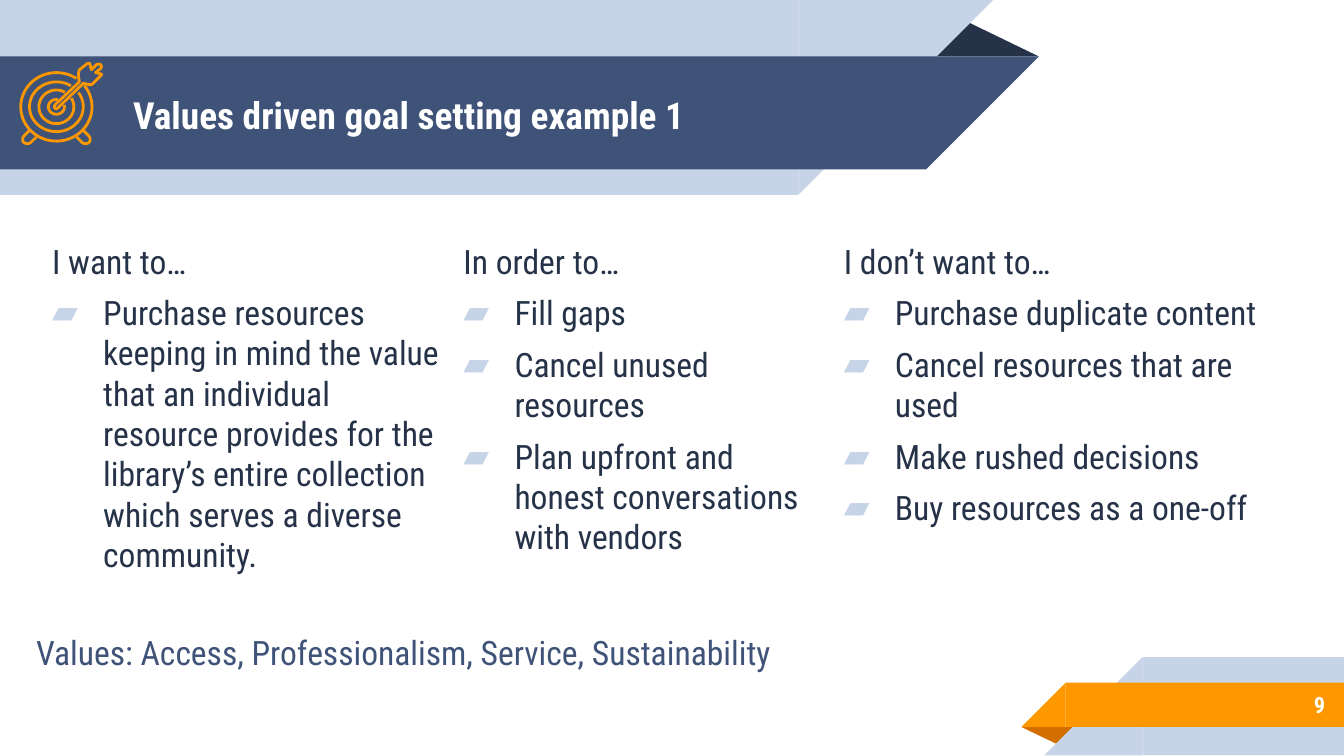
import math
from dataclasses import dataclass

from lxml import etree
from pptx import Presentation, util as u
from pptx.dml.color import RGBColor
from pptx.enum import shapes, text
from pptx.oxml import ns

PX = u.Inches(1) // 100
FINE = 100  # freeform units per px


@dataclass(frozen=True)
class Theme:
    font: str = "Roboto Condensed"
    ink: str = "263248"
    navy: str = "3F5378"
    pale: str = "C7D3E6"
    orange: str = "FF9800"
    rust: str = "D26F00"
    white: str = "FFFFFF"
    title: int = 20
    body: int = 18
    number: int = 12
    icon_line: float = 1.5


def px(*lengths):
    return [length * PX for length in lengths]


def add_bullet(paragraph, theme):
    properties = paragraph._p.get_or_add_pPr()
    bullet_color = etree.SubElement(properties, ns.qn("a:buClr"))
    etree.SubElement(bullet_color, ns.qn("a:srgbClr"), val=theme.pale)
    etree.SubElement(properties, ns.qn("a:buFont"), typeface=theme.font)
    etree.SubElement(properties, ns.qn("a:buChar"), char="▰")


def set_indent(paragraph, left, first):
    properties = paragraph._p.get_or_add_pPr()
    properties.set("marL", str(left * PX))
    properties.set("indent", str(first * PX))


def write(paragraph, words, *, theme, size, color, bold=False,
          align=text.PP_ALIGN.LEFT, before=0):
    paragraph.alignment = align
    paragraph.space_before = u.Pt(before)
    run = paragraph.add_run()
    run.text = words
    font = run.font
    font.name, font.size, font.bold = theme.font, u.Pt(size), bold
    font.color.rgb = RGBColor.from_string(color)


def ring(radius_x, radius_y, start, end):
    """Points of an open arc round the target's centre, in degrees."""
    angles = [math.radians(start + (end - start) * i / 60) for i in range(61)]
    return [(42 + radius_x * math.cos(a), 79.5 + radius_y * math.sin(a))
            for a in angles]


class Page:
    def __init__(self, slide, theme):
        self.slide, self.theme = slide, theme

    def shape(self, kind, box, color, rotation=0, apex=None):
        part = self.slide.shapes.add_shape(kind, *px(*box))
        part.shadow.inherit = False
        part.fill.solid()
        part.fill.fore_color.rgb = RGBColor.from_string(color)
        part.line.fill.background()
        part.rotation = rotation
        if apex is not None:
            part.adjustments[0] = apex

    def left_band(self, top, width, height, color):
        """Band from the left edge, with a slanted right end."""
        self.shape(shapes.MSO_SHAPE.RECTANGLE, (0, top, width, height), color)
        self.shape(shapes.MSO_SHAPE.RIGHT_TRIANGLE,
                   (width, top, height, height), color, rotation=90)

    def right_band(self, left, top, height, color):
        """Band to the right edge, with a slanted left end."""
        self.shape(shapes.MSO_SHAPE.RECTANGLE,
                   (left, top, 1000 - left, height), color)
        self.shape(shapes.MSO_SHAPE.RIGHT_TRIANGLE,
                   (left - height, top, height, height), color, rotation=270)

    def fold(self, box, color, rotation=0):
        self.shape(shapes.MSO_SHAPE.ISOSCELES_TRIANGLE, box, color,
                   rotation, apex=0.32)

    def frame(self, holder, anchor=text.MSO_ANCHOR.TOP, inset=10):
        frame = holder.text_frame
        frame.word_wrap = True
        frame.auto_size = text.MSO_AUTO_SIZE.NONE
        frame.vertical_anchor = anchor
        frame.margin_left = frame.margin_right = 10 * PX
        frame.margin_top = frame.margin_bottom = inset * PX
        return frame

    def title(self, words, box):
        holder = self.slide.shapes.title
        holder.left, holder.top, holder.width, holder.height = px(*box)
        self.slide.shapes._spTree.append(holder._element)  # above the bands
        frame = self.frame(holder, text.MSO_ANCHOR.MIDDLE)
        write(frame.paragraphs[0], words, theme=self.theme,
              size=self.theme.title, color=self.theme.white, bold=True)

    def label(self, words, box, *, anchor=text.MSO_ANCHOR.TOP, inset=10,
              **style):
        holder = self.slide.shapes.add_textbox(*px(*box))
        frame = self.frame(holder, anchor, inset)
        write(frame.paragraphs[0], words, theme=self.theme, **style)

    def column(self, left, width, heading, points):
        holder = self.slide.shapes.add_textbox(*px(left, 169, width, 296))
        frame = self.frame(holder)
        style = dict(theme=self.theme, size=self.theme.body,
                     color=self.theme.ink, before=6)
        write(frame.paragraphs[0], heading, **style)
        set_indent(frame.paragraphs[0], 12, 0)
        for point in points:
            paragraph = frame.add_paragraph()
            write(paragraph, point, **style)
            set_indent(paragraph, 50, -38)
            add_bullet(paragraph, self.theme)

    def outline(self, points, close=False):
        start, *rest = [(round(x * FINE), round(y * FINE)) for x, y in points]
        builder = self.slide.shapes.build_freeform(*start, scale=PX / FINE)
        builder.add_line_segments(rest, close=close)
        stroke = builder.convert_to_shape()
        stroke.shadow.inherit = False
        stroke.fill.background()
        stroke.line.color.rgb = RGBColor.from_string(self.theme.orange)
        stroke.line.width = u.Pt(self.theme.icon_line)


RINGS = [(26.5, 25.5, -56, -398), (20, 18.5, -35, 303),
         (6, 5.5, -15, 280), (13, 12.5, -61, -391)]
LEFT_FOOT = [(22, 97), (18, 101), (17, 102.5), (17, 105), (18, 106.3),
             (20, 107), (21.5, 106.8), (23, 106), (27, 102)]
ARROW = [(75, 55), (71, 54), (75, 51), (75.5, 49.5), (75, 48.2), (73.5, 47.7),
         (72, 48), (68, 52), (67, 48), (66.5, 47), (65, 47.3), (59, 52),
         (58.5, 54), (58.3, 56), (59, 61), (41, 78), (40.3, 79.5),
         (41, 80.7), (42, 81), (43, 80.4), (62, 62), (66, 63), (68, 63),
         (69, 62.3), (75, 56.3), (75.6, 55.5)]
COLUMNS = [
    (17, 324, "I want to…", [
        "Purchase resources keeping in mind the value that an individual "
        "resource provides for the library’s entire collection which serves "
        "a diverse community."]),
    (323, 292, "In order to…", [
        "Fill gaps", "Cancel unused resources",
        "Plan upfront and honest conversations with vendors"]),
    (606, 351, "I don’t want to…", [
        "Purchase duplicate content", "Cancel resources that are used",
        "Make rushed decisions", "Buy resources as a one-off"]),
]


def main():
    theme = Theme()
    deck = Presentation()
    deck.slide_width = 1000 * PX
    deck.slide_height = deck.slide_width * 9 // 16
    page = Page(deck.slides.add_slide(deck.slide_layouts[5]), theme)

    page.fold((688, 14, 85, 28), theme.ink)
    page.left_band(0, 594, 145, theme.pale)
    page.left_band(42, 689, 84, theme.navy)
    page.fold((760, 541, 43, 14), theme.rust, rotation=180)
    page.right_band(850, 489, 73, theme.pale)
    page.right_band(793, 508, 33, theme.orange)

    page.title("Values driven goal setting example 1", (89, 43, 575, 84))
    for column in COLUMNS:
        page.column(*column)
    page.label("9", (833, 507, 163, 35), anchor=text.MSO_ANCHOR.MIDDLE,
               size=theme.number, color=theme.white, bold=True,
               align=text.PP_ALIGN.RIGHT)
    page.label("Values: Access, Professionalism, Service, Sustainability",
               (17, 465, 667, 40), inset=5, size=theme.body, color=theme.navy)

    for arc in RINGS:
        page.outline(ring(*arc))
    page.outline(LEFT_FOOT)
    page.outline([(84 - x, y) for x, y in LEFT_FOOT])
    page.outline(ARROW, close=True)
    deck.save("out.pptx")


if __name__ == "__main__":
    main()
